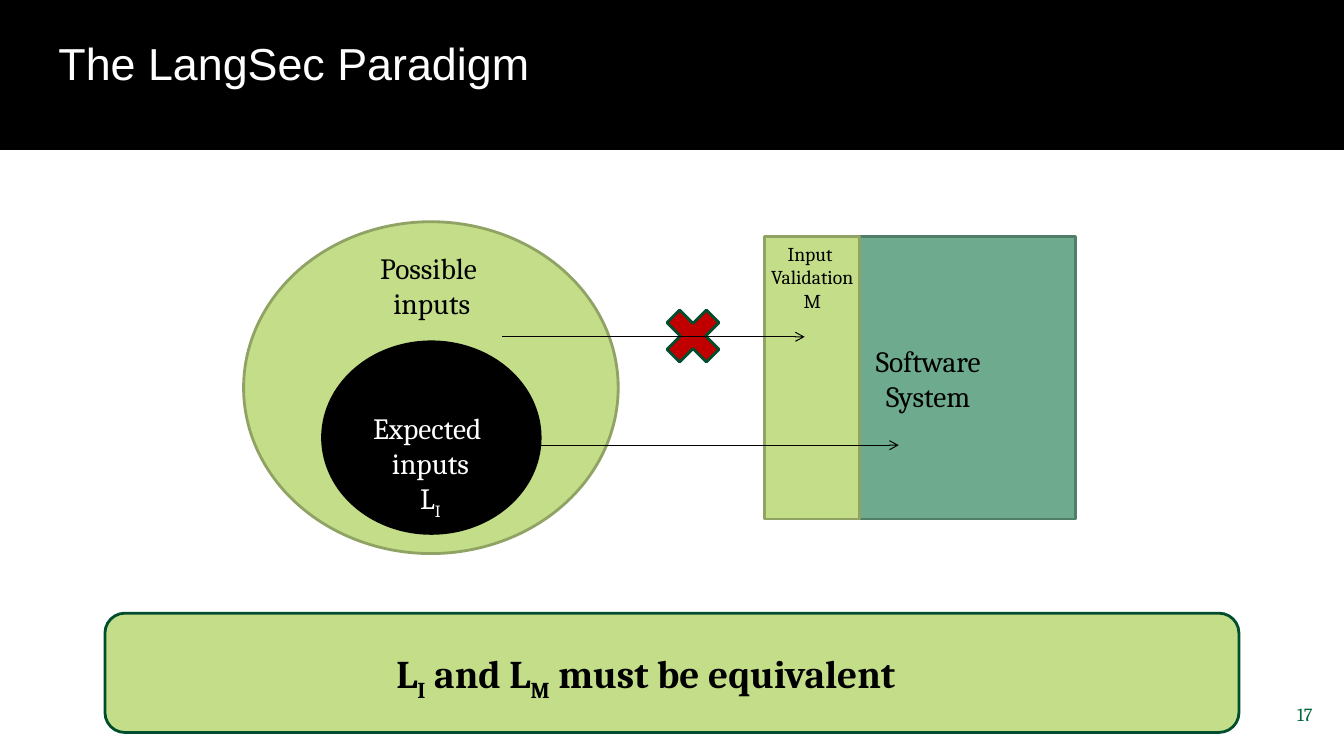
from dataclasses import dataclass

from lxml.etree import SubElement
from pptx import Presentation
from pptx.dml.color import RGBColor
from pptx.enum.shapes import MSO_CONNECTOR as Connector, MSO_SHAPE as Shape
from pptx.enum.text import MSO_ANCHOR as Anchor, MSO_AUTO_SIZE as AutoSize, PP_ALIGN as Align
from pptx.oxml.ns import qn
from pptx.util import Inches, Pt

COLUMNS, ROWS = 160, 90
WIDTH, HEIGHT = Inches(13.33), Inches(7.5)


@dataclass(frozen=True)
class Theme:
    """Colours, fonts and sizes of the slide."""
    black: str = "000000"
    white: str = "FFFFFF"
    lime: str = "C3DD88"
    olive: str = "90A365"
    teal: str = "6EAA8D"
    pine: str = "517E68"
    forest: str = "004E2E"
    green: str = "00693E"
    red: str = "C00000"
    heading: str = "Arial"
    body: str = "Cambria"
    title: float = 32
    statement: float = 28
    label: float = 21
    small: float = 14
    number: float = 13.2
    outline: float = 2
    arrow: float = 0.75


THEME = Theme()


def rgb(colour):
    """Turn a hex string into a colour."""
    return RGBColor.from_string(colour)


def across(columns):
    """Give the length of a number of grid columns."""
    return round(WIDTH * columns / COLUMNS)


def down(rows):
    """Give the length of a number of grid rows."""
    return round(HEIGHT * rows / ROWS)


def place(column, row, columns, rows):
    """Give left, top, width and height of a grid area."""
    return across(column), down(row), across(columns), down(rows)


def write(frame, lines, size, colour=THEME.black, font=THEME.body, bold=False, align=Align.CENTER):
    """Write one paragraph per line, whose parts alternate between normal and subscript."""
    for index, parts in enumerate(lines):
        paragraph = frame.add_paragraph() if index else frame.paragraphs[0]
        paragraph.alignment = align
        paragraph.font.name = font
        paragraph.font.size = Pt(size)
        paragraph.font.bold = bold
        paragraph.font.color.rgb = rgb(colour)
        for position, part in enumerate(parts):
            run = paragraph.add_run()
            run.text = part
            if position % 2:
                run.font._element.set("baseline", "-25000")


def add_area(slide, kind, area, fill, line):
    """Add a filled and outlined shape."""
    region = slide.shapes.add_shape(kind, *place(*area))
    region.shadow.inherit = False
    region.fill.solid()
    region.fill.fore_color.rgb = rgb(fill)
    region.line.color.rgb = rgb(line)
    region.line.width = Pt(THEME.outline)
    return region


def add_label(slide, area, lines, size, **style):
    """Add an unwrapped text that fits its box."""
    frame = slide.shapes.add_textbox(*place(*area)).text_frame
    frame.word_wrap = False
    frame.auto_size = AutoSize.SHAPE_TO_FIT_TEXT
    write(frame, lines, size, **style)


def add_furniture(slide, area, wording, size, anchor=Anchor.TOP, **style):
    """Add a wrapped text with wide margins and return its paragraph."""
    frame = slide.shapes.add_textbox(*place(*area)).text_frame
    frame.word_wrap = True
    frame.vertical_anchor = anchor
    frame.margin_left = frame.margin_right = Inches(0.13)
    frame.margin_top = frame.margin_bottom = Inches(0.13)
    write(frame, [(wording,)], size, **style)
    return frame.paragraphs[0]


def add_arrow(slide, start, end, row):
    """Add a level arrow between two columns."""
    flow = slide.shapes.add_connector(
        Connector.STRAIGHT, across(start), down(row), across(end), down(row))
    flow.line.color.rgb = rgb(THEME.black)
    flow.line.width = Pt(THEME.arrow)
    SubElement(flow.line._get_or_add_ln(), qn("a:tailEnd"), type="arrow")
    SubElement(flow._element.spPr, qn("a:effectLst"))


def add_header(slide):
    """Add the title band and the page number."""
    add_area(slide, Shape.RECTANGLE, (0, -0.4, 160, 18.1), THEME.black, THEME.black)
    title = add_furniture(slide, (5.4, 3.7, 149, 10.1), "The LangSec Paradigm", THEME.title,
                          colour=THEME.white, font=THEME.heading, align=Align.LEFT)
    title.line_spacing = 0.85
    add_furniture(slide, (148.2, 81.6, 9.6, 6.8), "17", THEME.number,
                  anchor=Anchor.MIDDLE, colour=THEME.green, align=Align.RIGHT)


def add_inputs(slide):
    """Add the expected inputs inside the possible inputs."""
    add_area(slide, Shape.OVAL, (29, 26.4, 44.6, 39.5), THEME.lime, THEME.olive)
    add_area(slide, Shape.OVAL, (38.4, 40.7, 25.9, 22.8), THEME.black, THEME.black)
    add_label(slide, (43.6, 29.2, 15.6, 9.7), [("Possible ",), ("inputs",)], THEME.label)
    add_label(slide, (42.8, 48.2, 16.9, 13.9), [("Expected ",), ("inputs",), ("L", "I")],
              THEME.label, colour=THEME.white)


def add_system(slide):
    """Add the software system."""
    system = add_area(slide, Shape.RECTANGLE, (93, 28.2, 35, 33.6), THEME.teal, THEME.pine)
    system.text_frame.vertical_anchor = Anchor.MIDDLE
    write(system.text_frame, [("Software",), ("System",)], THEME.label)


def add_validation(slide):
    """Add the validation layer with the blocked and the accepted flow."""
    add_area(slide, Shape.MATH_MULTIPLY, (78, 35.5, 9, 9), THEME.red, THEME.forest)
    add_area(slide, Shape.RECTANGLE, (91, 28.2, 11.3, 33.6), THEME.lime, THEME.olive)
    for end, row in ((107, 53), (95.8, 40.1)):
        add_arrow(slide, 59.8, end, row)
    add_label(slide, (90.4, 28.2, 12.6, 9.7), [("Input ",), ("Validation",), ("M",)], THEME.small)


def add_statement(slide):
    """Add the conclusion at the foot."""
    add_area(slide, Shape.ROUNDED_RECTANGLE, (12.5, 73, 135, 14.2), THEME.lime, THEME.forest)
    add_label(slide, (46, 76.7, 63.4, 6.8), [("L", "I", " and L", "M", " must be equivalent")],
              THEME.statement, bold=True, align=Align.LEFT)


def main():
    """Build and save the slide."""
    deck = Presentation()
    deck.slide_width, deck.slide_height = WIDTH, HEIGHT
    slide = deck.slides.add_slide(deck.slide_layouts[6])
    add_system(slide)
    add_header(slide)
    add_inputs(slide)
    add_validation(slide)
    add_statement(slide)
    deck.save("out.pptx")


if __name__ == "__main__":
    main()
